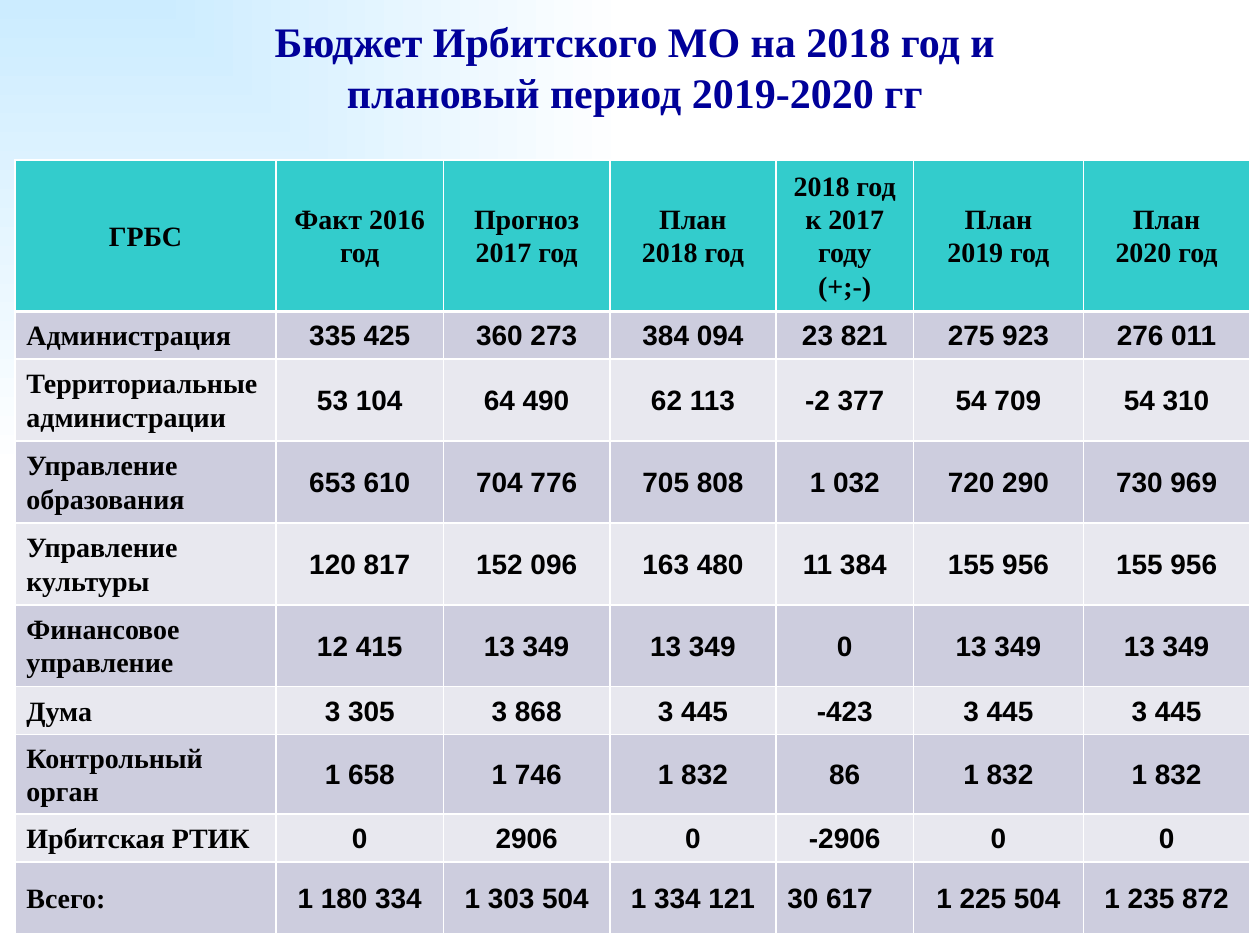
"""Build the budget slide with its table of spending by administrator."""
from dataclasses import dataclass

from lxml import etree
from pptx import Presentation
from pptx.dml.color import RGBColor
from pptx.enum.text import MSO_ANCHOR, MSO_AUTO_SIZE, PP_ALIGN
from pptx.oxml.ns import qn
from pptx.util import Inches, Pt

LEFT, CENTER = PP_ALIGN.LEFT, PP_ALIGN.CENTER
MIDDLE = MSO_ANCHOR.MIDDLE
FIXED = MSO_AUTO_SIZE.NONE
SERIF, SANS = "Times New Roman", "Arial"
WHITE, BLACK, NAVY, SKY = "FFFFFF", "000000", "000099", "CCECFF"
TEAL, BANDS = "33CCCC", ("E8E8EF", "CDCDDE")
THIN, THICK = 1, 2.25
WIDTHS = (2.07, 1.33, 1.32, 1.32, 1.09, 1.35, 1.32)


@dataclass
class Row:
    height: float
    texts: tuple


ROWS = (
    Row(1.2, ("ГРБС", "Факт 2016 год", "Прогноз 2017 год", "План\n2018 год",
              "2018 год к 2017 году\n(+;-)", "План\n2019 год", "План\n2020 год")),
    Row(0.38, ("Администрация", "335 425", "360 273", "384 094",
               "23 821", "275 923", "276 011")),
    Row(0.65, ("Территориальные администрации", "53 104", "64 490", "62 113",
               "-2 377", "54 709", "54 310")),
    Row(0.65, ("Управление образования", "653 610", "704 776", "705 808",
               "1 032", "720 290", "730 969")),
    Row(0.65, ("Управление культуры", "120 817", "152 096", "163 480",
               "11 384", "155 956", "155 956")),
    Row(0.65, ("Финансовое управление", "12 415", "13 349", "13 349",
               "0", "13 349", "13 349")),
    Row(0.38, ("Дума", "3 305", "3 868", "3 445", "-423", "3 445", "3 445")),
    Row(0.63, ("Контрольный орган", "1 658", "1 746", "1 832",
               "86", "1 832", "1 832")),
    Row(0.38, ("Ирбитская РТИК", "0", "2906", "0", "-2906", "0", "0")),
    Row(0.57, ("Всего:", "1 180 334", "1 303 504", "1 334 121",
               "30 617", "1 225 504", "1 235 872")),
)


def color(code: str) -> RGBColor:
    return RGBColor.from_string(code)


def write(frame, text: str, *, font=SERIF, size=16, ink=BLACK,
          align=CENTER, pitch=1.07) -> None:
    frame.text = text
    for para in frame.paragraphs:
        para.alignment = align
        para.line_spacing = pitch
        for run in para.runs:
            run.font.name = font
            run.font.size = Pt(size)
            run.font.bold = True
            run.font.color.rgb = color(ink)


def paint_back(slide) -> None:
    fill = slide.background.fill
    fill.gradient()
    for stop, code, place in zip(fill.gradient_stops, (SKY, WHITE), (0, 1)):
        stop.color.rgb = color(code)
        stop.position = place
    line = next(slide.element.iter(qn("a:lin")))
    path = etree.Element(qn("a:path"), path="rect")
    etree.SubElement(path, qn("a:fillToRect"), r="100000", b="100000")
    line.getparent().replace(line, path)


def add_edges(cell, top: float, base: float) -> None:
    props = cell._tc.get_or_add_tcPr()
    for side, width in (("L", THIN), ("R", THIN), ("T", top), ("B", base)):
        edge = etree.SubElement(props, qn(f"a:ln{side}"), w=str(Pt(width)))
        solid = etree.SubElement(edge, qn("a:solidFill"))
        etree.SubElement(solid, qn("a:srgbClr"), val=WHITE)


def fill_cell(cell, text: str, row: int, col: int) -> None:
    add_edges(cell, THICK if row == 1 else THIN, THICK if row == 0 else THIN)
    cell.fill.solid()
    cell.fill.fore_color.rgb = color(BANDS[row % 2] if row else TEAL)
    cell.vertical_anchor = MIDDLE
    cell.margin_left = cell.margin_right = Inches(0.09)
    cell.margin_top = cell.margin_bottom = Inches(0.05)
    last = row == len(ROWS) - 1
    flush = row and col == 0 or last and col == 4
    write(cell.text_frame, text, font=SANS if row and col else SERIF,
          align=LEFT if flush else CENTER)


def add_title(slide) -> None:
    title = slide.shapes.title
    title.left, title.top = Inches(0.58), Inches(0.09)
    title.width, title.height = Inches(9), Inches(0.87)
    frame = title.text_frame
    frame.auto_size = FIXED
    frame.vertical_anchor = MIDDLE
    write(frame, "Бюджет Ирбитского МО на 2018 год и \vплановый период 2019-2020 гг ",
          size=24, ink=NAVY, pitch=1.0)


def add_budget(slide) -> None:
    high = sum(row.height for row in ROWS)
    table = slide.shapes.add_table(
        len(ROWS), len(WIDTHS), Inches(0.12), Inches(1.27),
        Inches(sum(WIDTHS)), Inches(high)).table
    for col, width in zip(table.columns, WIDTHS):
        col.width = Inches(width)
    for r, row in enumerate(ROWS):
        table.rows[r].height = Inches(row.height)
        for c, text in enumerate(row.texts):
            fill_cell(table.cell(r, c), text, r, c)


def main() -> None:
    deck = Presentation()
    deck.slide_width, deck.slide_height = Inches(10), Inches(7.5)
    slide = deck.slides.add_slide(deck.slide_layouts[5])
    paint_back(slide)
    add_title(slide)
    add_budget(slide)
    deck.save("out.pptx")


if __name__ == "__main__":
    main()
